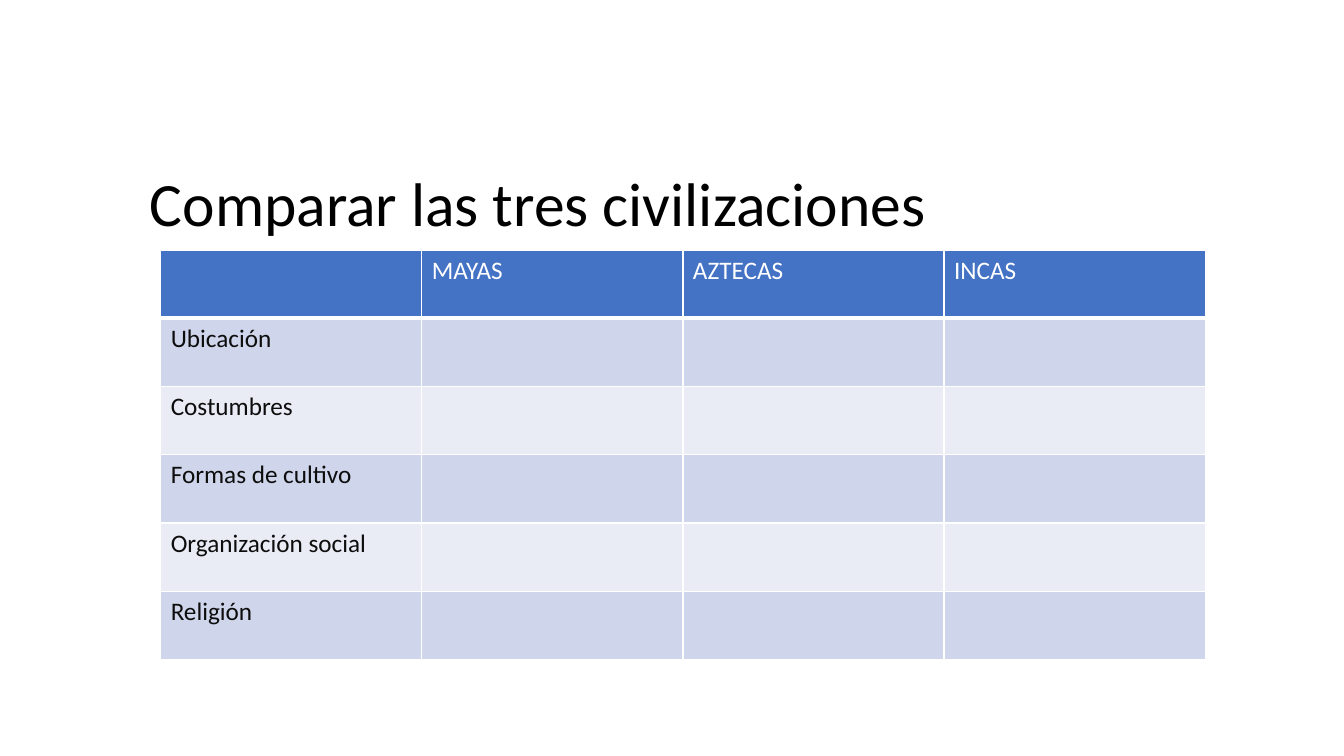
from typing import NamedTuple

from lxml import etree
from pptx import Presentation
from pptx.dml.color import RGBColor
from pptx.enum.text import MSO_ANCHOR
from pptx.oxml.ns import qn
from pptx.util import Cm, Pt

MIDDLE = MSO_ANCHOR.MIDDLE

BLACK = RGBColor(0x00, 0x00, 0x00)
NEAR_BLACK = RGBColor(0x0D, 0x0D, 0x0D)
WHITE = RGBColor(0xFF, 0xFF, 0xFF)
HEADER_BLUE = RGBColor(0x44, 0x72, 0xC4)
DARK_BAND = RGBColor(0xCF, 0xD5, 0xEA)
LIGHT_BAND = RGBColor(0xE9, 0xEB, 0xF5)

FONT = "Calibri"
COLUMN_WIDTH = Cm(6.58)
ROW_HEIGHT = Cm(1.72)

CIVILIZATIONS = ["MAYAS", "AZTECAS", "INCAS"]
ASPECTS = ["Ubicación", "Costumbres", "Formas de cultivo", "Organización social", "Religión"]


class RowStyle(NamedTuple):
    fill: RGBColor
    text: RGBColor
    bottom_border: float


HEADER = RowStyle(HEADER_BLUE, WHITE, 3)
BANDS = [RowStyle(DARK_BAND, NEAR_BLACK, 1), RowStyle(LIGHT_BAND, NEAR_BLACK, 1)]


def add_run(paragraph, text: str, size: float, color: RGBColor) -> None:
    run = paragraph.add_run()
    run.text = text
    run.font.name = FONT
    run.font.size = Pt(size)
    run.font.bold = False
    run.font.color.rgb = color


def add_borders(cell, bottom: float) -> None:
    """Draw white lines around a cell; they must come before its fill in the XML."""
    properties = cell._tc.get_or_add_tcPr()
    widths = {"a:lnL": 1, "a:lnR": 1, "a:lnT": 1, "a:lnB": bottom}
    for position, (tag, width) in enumerate(widths.items()):
        line = etree.Element(qn(tag), w=str(Pt(width)))
        fill = etree.SubElement(line, qn("a:solidFill"))
        etree.SubElement(fill, qn("a:srgbClr"), val=str(WHITE))
        properties.insert(position, line)


def add_title(slide, text: str) -> None:
    frame = slide.shapes.add_textbox(Cm(3.53), Cm(4.11), Cm(26.67), Cm(2.18)).text_frame
    frame.word_wrap = True
    frame.vertical_anchor = MIDDLE
    paragraph = frame.paragraphs[0]
    paragraph.line_spacing = 0.9
    add_run(paragraph, text, 44, BLACK)


def add_comparison(slide) -> None:
    rows = [["", *CIVILIZATIONS]] + [[aspect] + [""] * len(CIVILIZATIONS) for aspect in ASPECTS]
    columns = len(rows[0])
    table = slide.shapes.add_table(
        len(rows), columns, Cm(4.05), Cm(6.3), COLUMN_WIDTH * columns, ROW_HEIGHT * len(rows)
    ).table
    for column in table.columns:
        column.width = COLUMN_WIDTH
    for index, texts in enumerate(rows):
        table.rows[index].height = ROW_HEIGHT
        style = BANDS[(index - 1) % 2] if index else HEADER
        for cell, text in zip(table.rows[index].cells, texts):
            cell.fill.solid()
            cell.fill.fore_color.rgb = style.fill
            add_borders(cell, style.bottom_border)
            if text:
                add_run(cell.text_frame.paragraphs[0], text, 18, style.text)


def main() -> None:
    presentation = Presentation()
    presentation.slide_width = Cm(33.87)
    presentation.slide_height = Cm(19.05)
    slide = presentation.slides.add_slide(presentation.slide_layouts[6])
    add_title(slide, "Comparar las tres civilizaciones")
    add_comparison(slide)
    presentation.save("out.pptx")


if __name__ == "__main__":
    main()
